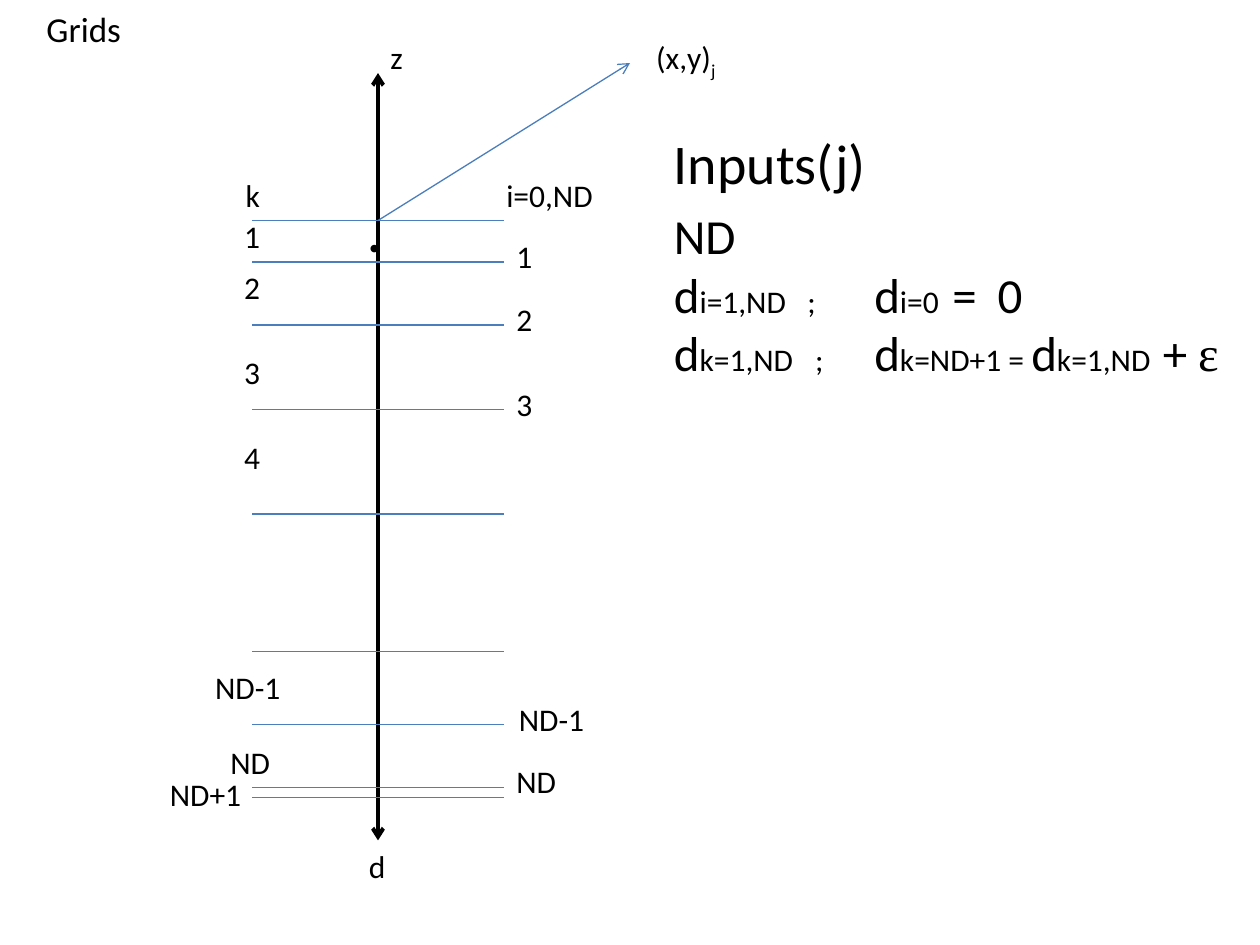
"""Build the slide that shows the vertical grid layout and its inputs."""
from lxml import etree
from pptx import Presentation
from pptx import util as u
from pptx.dml.color import RGBColor
from pptx.enum import shapes, text
from pptx.oxml import ns

COLOURS = {"ink": "000000", "level": "4B7EBC"}
SANS, SERIF = "Calibri", "Times New Roman"
AXIS_X, LEVEL_LEFT, LEVEL_RIGHT = 3, 2, 4
SURFACE = 1.75
LEVELS = [SURFACE, 2.08, 2.58, 3.25, 4.08, 5.17, 5.75, 6.25, 6.33]
LABELS = [
    ("k", 1.85, 1.35, 0.32), ("1", 1.84, 1.67, 0.33), ("2", 1.84, 2.08, 0.33),
    ("3", 1.84, 2.75, 0.33), ("4", 1.84, 3.43, 0.33), ("ND-1", 1.61, 5.25, 0.73),
    ("ND", 1.73, 5.85, 0.52), ("ND+1", 1.25, 6.1, 0.78),
    ("i=0,ND", 3.92, 1.35, 0.9), ("1", 4, 1.83, 0.33), ("2", 4, 2.33, 0.33),
    ("3", 4, 3.01, 0.33), ("ND-1", 4.02, 5.51, 0.73), ("ND", 4, 6, 0.52),
    ("z", 3, 0.25, 0.3), ("d", 2.83, 6.67, 0.34),
]
LARGE, SMALL = {"size": 28}, {"size": 18}
EQUATIONS = [
    ([], [("ND", LARGE)]),
    ([1.06, 1.59, 2.21, 2.57],
     [("d", LARGE), ("i=1,ND\t;\t", SMALL), ("d", LARGE), ("i=0\t", SMALL), ("=\t0", LARGE)]),
    ([1.12, 1.59, 3.88],
     [("d", LARGE), ("k=1,ND\t;\t", SMALL), ("d", LARGE), ("k=ND+1 = ", SMALL),
      ("d", LARGE), ("k=1,ND\t", SMALL), ("+ ", LARGE), ("ε", {"size": 28, "font": SERIF})]),
]


def write(paragraph, words, size=18, font=SANS, baseline=0):
    """Add a formatted run to a paragraph."""
    run = paragraph.add_run()
    run.text = words
    run.font.size = u.Pt(size)
    run.font.name = font
    run.font.color.rgb = RGBColor.from_string(COLOURS["ink"])
    if baseline:
        run.font._element.set("baseline", str(baseline * 1000))


def add_frame(slide, left, top, width, height=0.4, wrap=False, grow=True):
    """Add a text box and return its text frame."""
    box = slide.shapes.add_textbox(*map(u.Inches, (left, top, width, height)))
    frame = box.text_frame
    frame.word_wrap = wrap
    fit = text.MSO_AUTO_SIZE
    frame.auto_size = fit.SHAPE_TO_FIT_TEXT if grow else fit.NONE
    return frame


def add_label(slide, words, left, top, width, **run_format):
    """Add a one-line label and return its paragraph."""
    paragraph = add_frame(slide, left, top, width).paragraphs[0]
    write(paragraph, words, **run_format)
    return paragraph


def add_line(slide, start, end, colour="level", width=0.75, arrows=()):
    """Add a straight line with open arrowheads at the named ends."""
    line = slide.shapes.add_connector(
        shapes.MSO_CONNECTOR.STRAIGHT, *map(u.Inches, (*start, *end)))
    line.line.color.rgb = RGBColor.from_string(COLOURS[colour])
    line.line.width = u.Pt(width)
    for end_name in arrows:
        etree.SubElement(line.line._get_or_add_ln(), ns.qn(f"a:{end_name}"), type="arrow")
    etree.SubElement(line._element.spPr, ns.qn("a:effectLst"))


def add_tabs(paragraph, stops):
    """Give a paragraph left tab stops."""
    tabs = etree.SubElement(paragraph._p.get_or_add_pPr(), ns.qn("a:tabLst"))
    for stop in stops:
        etree.SubElement(tabs, ns.qn("a:tab"), pos=str(u.Inches(stop)), algn="l")


def add_title(slide):
    """Add the slide title."""
    frame = add_frame(slide, 0.08, 0, 1.17, 0.45, wrap=True, grow=False)
    frame.vertical_anchor = text.MSO_ANCHOR.MIDDLE
    frame.paragraphs[0].alignment = text.PP_ALIGN.CENTER
    write(frame.paragraphs[0], "Grids", size=20)


def add_grid(slide):
    """Add the depth axis, its levels, the position arrow and all labels."""
    add_line(slide, (AXIS_X, 0.58), (AXIS_X, 6.67), "ink", 2.25, ("headEnd", "tailEnd"))
    for depth in LEVELS:
        add_line(slide, (LEVEL_LEFT, depth), (LEVEL_RIGHT, depth))
    add_line(slide, (AXIS_X, SURFACE), (5, 0.5), arrows=("tailEnd",))
    for label in LABELS:
        add_label(slide, *label)
    position = add_label(slide, "(x,y)", 5.11, 0.25, 0.7)
    write(position, "j", baseline=-25)
    add_label(slide, "•", 2.83, 1.76, 0.29, font=SERIF)


def add_inputs(slide):
    """Add the inputs heading and the equations below it."""
    heading = add_frame(slide, 5.25, 0.97, 2.19, 0.7, wrap=True, grow=False)
    write(heading.paragraphs[0], "Inputs(j)", size=32)
    frame = add_frame(slide, 5.25, 1.58, 4.59, 1.51, wrap=True)
    for index, (stops, runs) in enumerate(EQUATIONS):
        paragraph = frame.add_paragraph() if index else frame.paragraphs[0]
        if stops:
            add_tabs(paragraph, stops)
        for words, run_format in runs:
            write(paragraph, words, **run_format)


def main():
    """Build and save the slide."""
    deck = Presentation()
    deck.slide_width, deck.slide_height = u.Inches(10), u.Inches(7.5)
    slide = deck.slides.add_slide(deck.slide_layouts[6])
    add_title(slide)
    add_grid(slide)
    add_inputs(slide)
    deck.save("out.pptx")


if __name__ == "__main__":
    main()
